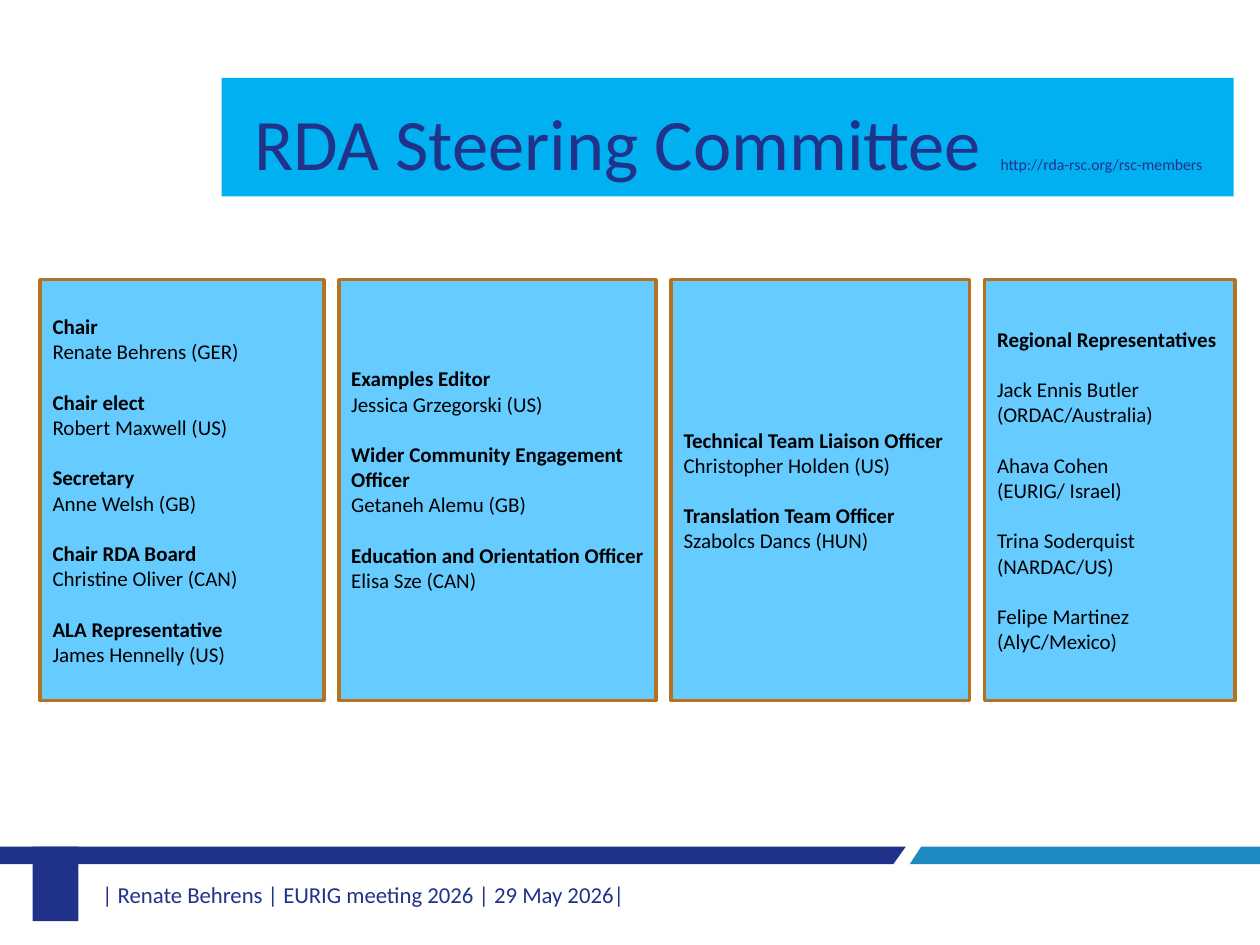
import dataclasses
import pptx
import pptx.dml.color
import pptx.enum.shapes
import pptx.enum.text
import pptx.oxml
import pptx.oxml.ns
import pptx.util

Cm, Pt = pptx.util.Cm, pptx.util.Pt
RECT = pptx.enum.shapes.MSO_SHAPE.RECTANGLE
ALIGN = pptx.enum.text.PP_ALIGN
MID = pptx.enum.text.MSO_ANCHOR.MIDDLE
FIXED = pptx.enum.text.MSO_AUTO_SIZE.NONE


@dataclasses.dataclass(frozen=True)
class Theme:
    """Colours, typeface and type sizes."""
    face: str = "Calibri"
    navy: str = "203189"
    blue: str = "1D8BC1"
    ink: str = "21328A"
    banner: str = "00B0F0"
    card: str = "66CCFF"
    edge: str = "B57321"
    black: str = "000000"
    head: float = 41.4
    link: float = 9
    body: float = 12
    foot: float = 13
    gap: float = 14.4


@dataclasses.dataclass(frozen=True)
class Box:
    """A region in centimetres."""
    x: float
    y: float
    w: float
    h: float

    def place(self):
        """Return left, top, width and height as lengths."""
        return [Cm(v) for v in (self.x, self.y, self.w, self.h)]


THEME = Theme()
GROUPS = [
    [("Chair", "Renate Behrens (GER)"),
     ("Chair elect", "Robert Maxwell (US)"),
     ("Secretary", "Anne Welsh (GB)"),
     ("Chair RDA Board", "Christine Oliver (CAN)"),
     ("ALA Representative", "James Hennelly (US)")],
    [("Examples Editor", "Jessica Grzegorski (US)"),
     ("Wider Community Engagement Officer", "Getaneh Alemu (GB)"),
     ("Education and Orientation Officer", "Elisa Sze (CAN)")],
    [("Technical Team Liaison Officer", "Christopher Holden (US)"),
     ("Translation Team Officer", "Szabolcs Dancs (HUN)")],
    [("Regional Representatives", ""),
     ("", "Jack Ennis Butler (ORDAC/Australia)"),
     ("", "Ahava Cohen\v(EURIG/ Israel)"),
     ("", "Trina Soderquist (NARDAC/US)"),
     ("", "Felipe Martinez\v(AlyC/Mexico)")],
]
WIDTHS = [5.72, 6.4, 6.02, 5.05]
DROPS = [0, 0.43, 0, 0]


def tint(code):
    """Turn a hex code into a colour."""
    return pptx.dml.color.RGBColor.from_string(code)


def paint(shape, fill, edge=None):
    """Give a shape a flat fill and an optional edge."""
    shape.shadow.inherit = False
    shape.fill.solid()
    shape.fill.fore_color.rgb = tint(fill)
    if edge:
        shape.line.color.rgb = tint(edge)
        shape.line.width = Pt(2)
    else:
        shape.line.fill.background()


def style(para, size, code, bold=False):
    """Set the font of a whole paragraph."""
    font = para.font
    font.name, font.size, font.bold = THEME.face, Pt(size), bold
    font.color.rgb = tint(code)


def pad(frame, left, top, right, base):
    """Set the insets of a wrapped, centred frame."""
    frame.word_wrap, frame.vertical_anchor = True, MID
    frame.auto_size = FIXED
    frame.margin_left, frame.margin_top = Cm(left), Cm(top)
    frame.margin_right, frame.margin_bottom = Cm(right), Cm(base)


def add_title(slide, box):
    """Fill the title banner and its web address."""
    title = slide.shapes.title
    title.left, title.top, title.width, title.height = box.place()
    title.fill.solid()
    title.fill.fore_color.rgb = tint(THEME.banner)
    frame = title.text_frame
    pad(frame, 0.66, 0.26, 0.18, 0.1)
    para = frame.paragraphs[0]
    para.alignment = ALIGN.LEFT
    tabs = pptx.oxml.parse_xml(
        f'<a:tabLst {pptx.oxml.ns.nsdecls("a")}>'
        f'<a:tab pos="{Cm(15.04)}" algn="l"/></a:tabLst>')
    para._p.get_or_add_pPr().append(tabs)
    style(para, THEME.head, THEME.ink)
    para.add_run().text = "RDA Steering Committee"
    link = para.add_run()
    link.text = "\thttp://rda-rsc.org/rsc-members"
    link.font.size = Pt(THEME.link)


def add_card(slide, box, group, drop):
    """Draw one card of roles and names."""
    card = slide.shapes.add_shape(RECT, *box.place())
    paint(card, THEME.card, THEME.edge)
    frame = card.text_frame
    pad(frame, 0.25, 0.13, 0.25, 0.13 + drop)
    para = frame.paragraphs[0]
    for num, pair in enumerate(group):
        lines = [(text, bold) for text, bold in zip(pair, (True, False)) if text]
        for row, (text, bold) in enumerate(lines):
            if num or row:
                para = frame.add_paragraph()
            para.text = text
            para.alignment = ALIGN.LEFT
            if num and not row:
                para.space_before = Pt(THEME.gap)
            style(para, THEME.body, THEME.black, bold)


def add_cards(slide, box):
    """Lay the cards out in a row with equal gaps."""
    gap = (box.w - sum(WIDTHS)) / (len(WIDTHS) - 1)
    left = box.x
    for width, group, drop in zip(WIDTHS, GROUPS, DROPS):
        add_card(slide, Box(left, box.y, width, box.h), group, drop)
        left += width + gap


def add_band(slide, box, points, code):
    """Draw one slanted band from points within the box."""
    spots = [(Cm(box.x + x), Cm(box.y + y)) for x, y in points]
    build = slide.shapes.build_freeform(*spots[0])
    build.add_line_segments(spots[1:], close=True)
    paint(build.convert_to_shape(), code)


def add_foot(slide, box):
    """Draw the bands, the tab and the footer line."""
    deep = 0.35
    add_band(slide, box, [(0, 0), (18.26, 0), (18.01, deep), (0, deep)],
             THEME.navy)
    add_band(slide, box, [(18.57, 0), (box.w, 0), (box.w, deep), (18.34, deep)],
             THEME.blue)
    block = Box(box.x + 0.66, box.y, 0.92, box.h)
    paint(slide.shapes.add_shape(RECT, *block.place()), THEME.navy)
    note = Box(box.x + 1.88, box.y + 0.46, 14.83, 1.02)
    frame = slide.shapes.add_textbox(*note.place()).text_frame
    pad(frame, 0.18, 0.1, 0.18, 0.1)
    para = frame.paragraphs[0]
    para.text = "| Renate Behrens | EURIG meeting 2026 | 29 May 2026|"
    style(para, THEME.foot, THEME.ink)


def main():
    """Build and save the slide."""
    deck = pptx.Presentation()
    deck.slide_width, deck.slide_height = Cm(25.4), Cm(19.05)
    slide = deck.slides.add_slide(deck.slide_layouts[5])
    add_foot(slide, Box(0, 17.07, 25.4, 1.5))
    add_title(slide, Box(4.47, 1.57, 20.4, 2.39))
    add_cards(slide, Box(0.81, 5.64, 24.09, 8.48))
    deck.save("out.pptx")


if __name__ == "__main__":
    main()
